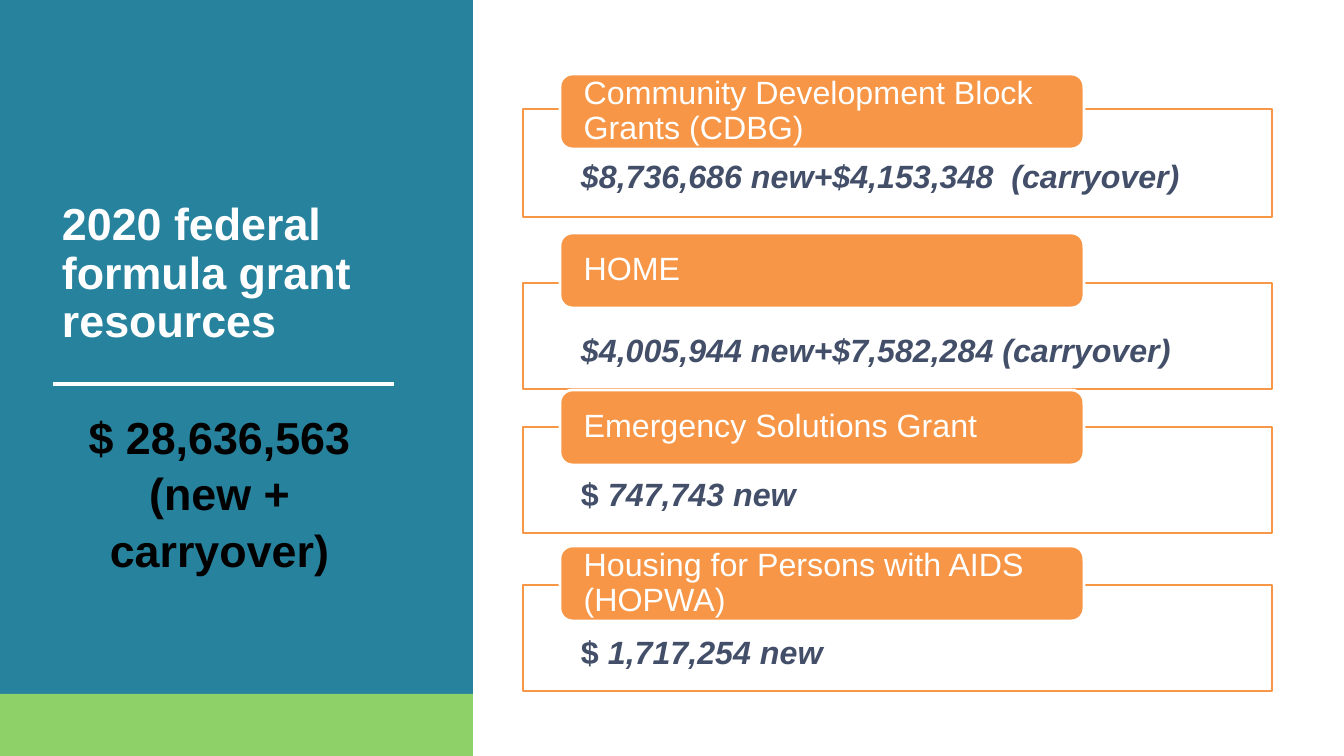
from dataclasses import dataclass

from lxml import etree
from pptx import Presentation
from pptx.dml.color import RGBColor
from pptx.enum.shapes import MSO_CONNECTOR, MSO_SHAPE
from pptx.enum.text import MSO_ANCHOR, PP_ALIGN
from pptx.oxml.ns import qn
from pptx.util import Pt

RECT, ROUNDED = MSO_SHAPE.RECTANGLE, MSO_SHAPE.ROUNDED_RECTANGLE
STRAIGHT = MSO_CONNECTOR.STRAIGHT
TOP, MIDDLE = MSO_ANCHOR.TOP, MSO_ANCHOR.MIDDLE
LEFT, CENTER = PP_ALIGN.LEFT, PP_ALIGN.CENTER

# Content
TITLE = "2020 federal formula grant resources"
TOTAL = "$ 28,636,563 (new + carryover)"
# grant name, upright part of amount, italic part, header top, box top, box height
GRANTS = [
    ("Community Development Block Grants (CDBG)", "",
     "$8,736,686 new+$4,153,348  (carryover)", 74, 109, 108),
    ("HOME", "", "$4,005,944 new+$7,582,284 (carryover)", 233, 283, 106),
    ("Emergency Solutions Grant", "$ ", "747,743 new", 390, 427, 106),
    ("Housing for Persons with AIDS (HOPWA)", "$ ", "1,717,254 new", 546, 585, 106),
]

# Layout in px
SLIDE_W, SLIDE_H = 1344, 756
PANEL_W, PANEL_H = 473, 694
TITLE_AREA = (61, 194, 311, 156)
TOTAL_AREA = (63, 395, 313, 282)
RULE = (53, 384, 394, 384)
BOX_X, BOX_W = 523, 749
HEADER_X, HEADER_W, HEADER_H = 560, 524, 75


@dataclass(frozen=True)
class Theme:
    font: str = "Arial"
    panel: str = "27829D"
    footer: str = "8FD169"
    accent: str = "F79646"
    white: str = "FFFFFF"
    black: str = "000000"
    amount: str = "434F69"
    heading_pt: int = 32
    grant_pt: int = 23
    line_pt: int = 2
    rule_pt: float = 2.58


THEME = Theme()


def px(value):
    return round(value * 914400 / 100.8)


def rgb(color):
    return RGBColor.from_string(color)


def write(frame, runs, size, color, margins, anchor=TOP, align=LEFT, **spacing):
    """Fill a text frame; runs holds (text, bold, italic) tuples."""
    left, top, right, bottom = map(px, margins)
    settings = dict(margin_left=left, margin_top=top, margin_right=right,
                    margin_bottom=bottom, word_wrap=True, vertical_anchor=anchor)
    for name, value in settings.items():
        setattr(frame, name, value)
    paragraph = frame.paragraphs[0]
    for name, value in dict(alignment=align, **spacing).items():
        setattr(paragraph, name, value)
    for text, bold, italic in runs:
        run = paragraph.add_run()
        run.text = text
        font_format = dict(name=THEME.font, size=Pt(size), bold=bold, italic=italic)
        for name, value in font_format.items():
            setattr(run.font, name, value)
        run.font.color.rgb = rgb(color)


def add_block(slide, kind, area, fill, line=None):
    block = slide.shapes.add_shape(kind, *map(px, area))
    block.shadow.inherit = False
    block.fill.solid()
    block.fill.fore_color.rgb = rgb(fill)
    if line:
        block.line.color.rgb = rgb(line)
        block.line.width = Pt(THEME.line_pt)
    else:
        block.line.fill.background()
    return block


def add_side_panel(slide):
    add_block(slide, RECT, (0, 0, PANEL_W, PANEL_H), THEME.panel)
    add_block(slide, RECT, (0, PANEL_H, PANEL_W, SLIDE_H - PANEL_H), THEME.footer)

    rule = slide.shapes.add_connector(STRAIGHT, *map(px, RULE))
    rule.line.color.rgb = rgb(THEME.white)
    rule.line.width = Pt(THEME.rule_pt)
    etree.SubElement(rule._element.spPr, qn("a:effectLst"))

    total = slide.shapes.add_textbox(*map(px, TOTAL_AREA))
    write(total.text_frame, [(TOTAL, True, False)], THEME.heading_pt, THEME.black,
          (0, 12, 0, 0), align=CENTER, line_spacing=1.05)

    # Title sits in front of the panel
    title = slide.shapes.title
    title.left, title.top, title.width, title.height = map(px, TITLE_AREA)
    write(title.text_frame, [(TITLE, True, False)], THEME.heading_pt, THEME.white,
          (1, 7, 0, 0), line_spacing=Pt(34.7), space_before=Pt(5.2))
    slide.shapes._spTree.append(title._element)


def add_grant(slide, name, upright, italic, header_top, box_top, box_h):
    box = add_block(slide, RECT, (BOX_X, box_top, BOX_W, box_h),
                    THEME.white, THEME.accent)
    runs = [run for run in ((upright, True, False), (italic, True, True)) if run[0]]
    write(box.text_frame, runs, THEME.grant_pt, THEME.amount,
          (58, 52, 58, 18), line_spacing=0.9)

    header = add_block(slide, ROUNDED, (HEADER_X, header_top, HEADER_W, HEADER_H),
                       THEME.accent, THEME.white)
    write(header.text_frame, [(name, False, False)], THEME.grant_pt, THEME.white,
          (20, 0, 20, 0), anchor=MIDDLE, line_spacing=0.9)


def main():
    deck = Presentation()
    deck.slide_width, deck.slide_height = px(SLIDE_W), px(SLIDE_H)
    slide = deck.slides.add_slide(deck.slide_layouts[5])
    add_side_panel(slide)
    for grant in GRANTS:
        add_grant(slide, *grant)
    deck.save("out.pptx")


if __name__ == "__main__":
    main()
